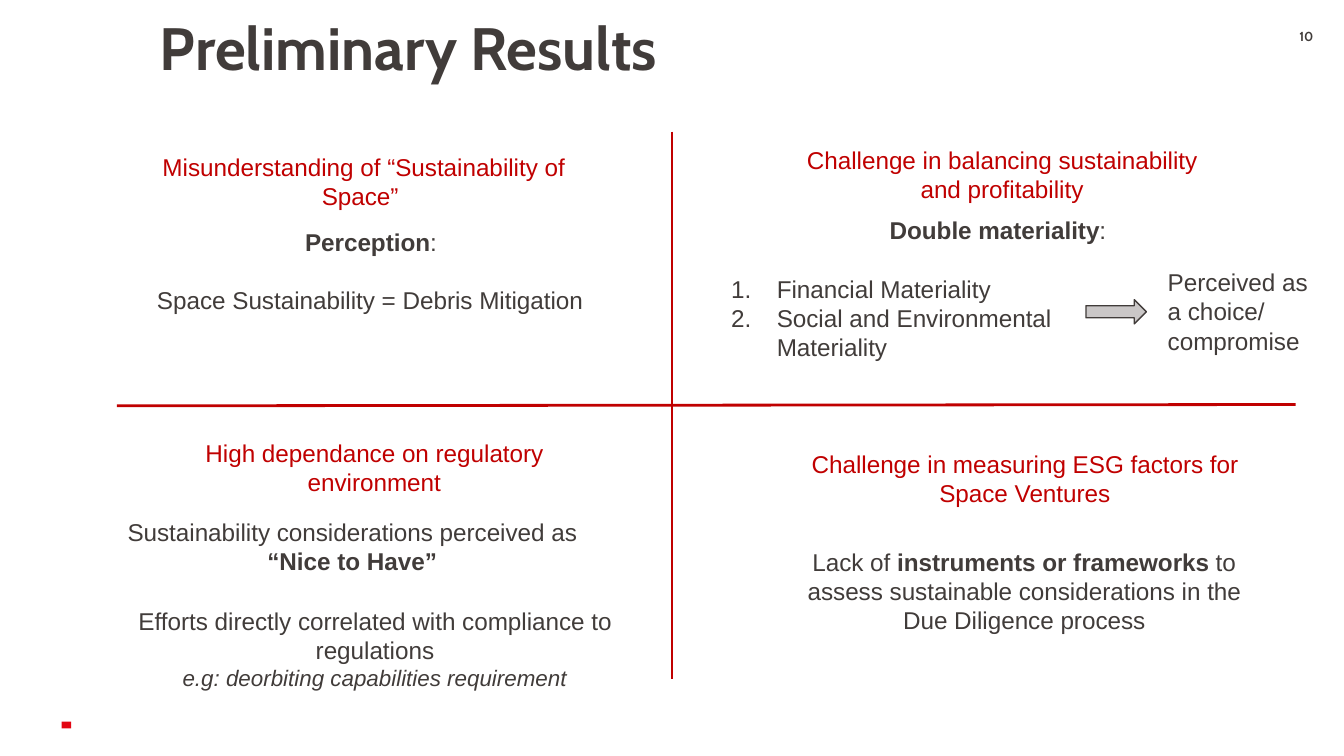
import pptx
import pptx.util
import pptx.dml.color
import pptx.enum.shapes
import pptx.enum.text
import lxml.etree
from dataclasses import dataclass
from pptx.util import Inches


@dataclass(frozen=True)
class Theme:
    text: str = "413C3A"
    accent: str = "C00000"
    marker: str = "E30613"
    arrow: str = "CAC7C7"
    heading_font: str = "Cabin"
    body_font: str = "Arial"
    title: int = 32
    body: int = 13
    example: int = 12
    number: int = 7


theme = Theme()
rgb = pptx.dml.color.RGBColor.from_string
LEFT = pptx.enum.text.PP_ALIGN.LEFT
CENTER = pptx.enum.text.PP_ALIGN.CENTER


def place(sp, left, top, width, height, insets=(0.1, 0.1, 0.1, 0.1)):
    sp.left, sp.top, sp.width, sp.height = map(Inches, (left, top, width, height))
    tf = sp.text_frame
    tf.word_wrap = True
    tf.auto_size = pptx.enum.text.MSO_AUTO_SIZE.NONE
    tf.vertical_anchor = pptx.enum.text.MSO_ANCHOR.TOP
    tf.margin_left, tf.margin_top, tf.margin_right, tf.margin_bottom = map(Inches, insets)
    return tf


def write(p, runs, align=CENTER, size=theme.body, color=theme.text,
          font=theme.body_font, italic=False):
    p.alignment = align
    p.space_before = pptx.util.Pt(0)
    for text, bold in runs:
        r = p.add_run()
        r.text = text
        r.font.name = font
        r.font.size = pptx.util.Pt(size)
        r.font.color.rgb = rgb(color)
        r.font.bold = bold
        r.font.italic = italic


prs = pptx.Presentation()
prs.slide_width = Inches(10)
prs.slide_height = prs.slide_width * 9 // 16
s = prs.slides.add_slide(prs.slide_layouts[1])
title, materialities = s.placeholders

tf = place(title, 0.99, 0.14, 5.86, 1.17, (0.2, 0, 0.08, 0.05))
p = tf.paragraphs[0]
p.line_spacing = 0.9
write(p, [("Preliminary Results", True)], LEFT, theme.title, font=theme.heading_font)

number = s.shapes.add_textbox(0, 0, 0, 0)
tf = place(number, 9.44, 0.21, 0.56, 0.18, (0.1, 0, 0.1, 0))
write(tf.paragraphs[0], [("10", True)], size=theme.number, font=theme.heading_font)

for x1, y1, x2, y2 in [(5, 0.98, 5, 5.05), (9.64, 3.01, 0.87, 3.02)]:
    divider = s.shapes.add_connector(
        pptx.enum.shapes.MSO_CONNECTOR.STRAIGHT, *map(Inches, (x1, y1, x2, y2)))
    divider.line.color.rgb = rgb(theme.accent)
    divider.line.width = pptx.util.Pt(1.5)
    lxml.etree.SubElement(divider.element.spPr, pptx.oxml.ns.qn("a:effectLst"))

headings = [
    (0.99, 1.03, "Misunderstanding of “Sustainability of Space” "),
    (5.74, 0.98, "Challenge in balancing sustainability and profitability"),
    (1.07, 3.16, "High dependance on regulatory environment"),
    (5.91, 3.24, "Challenge in measuring ESG factors for Space Ventures"),
]
for left, top, text in headings:
    tf = place(s.shapes.add_textbox(0, 0, 0, 0), left, top, 3.43, 0.64)
    write(tf.paragraphs[0], [(text, False)], color=theme.accent)

tf = place(s.shapes.add_textbox(0, 0, 0, 0), 1.07, 1.59, 3.43, 1.3)
write(tf.paragraphs[0], [("Perception", True), (": ", False)])
p = tf.add_paragraph()
write(p, [("Space Sustainability = Debris Mitigation", False)], LEFT)
p.space_before = pptx.util.Pt(15.5)

tf = place(materialities, 5.18, 1.94, 3.08, 0.86)
for i, text in enumerate(["Financial Materiality", "Social and Environmental Materiality"]):
    p = tf.add_paragraph() if i else tf.paragraphs[0]
    pPr = p._p.get_or_add_pPr()
    pPr.set("marL", str(Inches(0.5)))
    pPr.set("indent", str(Inches(-0.34)))
    bullet_color = lxml.etree.SubElement(pPr, pptx.oxml.ns.qn("a:buClr"))
    lxml.etree.SubElement(bullet_color, pptx.oxml.ns.qn("a:srgbClr"), val=theme.text)
    lxml.etree.SubElement(pPr, pptx.oxml.ns.qn("a:buFont"), typeface=theme.body_font)
    lxml.etree.SubElement(pPr, pptx.oxml.ns.qn("a:buAutoNum"), type="arabicPeriod")
    write(p, [(text, False)], LEFT)

blocks = [
    (8.59, 1.89, 1.29, 0.86, LEFT,
     [[("Perceived as a choice/", False)], [("compromise", False)]]),
    (5.81, 1.5, 3.28, 0.42, CENTER, [[("Double materiality", True), (": ", False)]]),
    (0.74, 3.75, 3.76, 1.08, CENTER,
     [[("Sustainability considerations perceived as", False)], [("“Nice to Have”", True)]]),
    (5.74, 3.97, 3.76, 1.3, CENTER,
     [[("Lack of ", False), ("instruments or frameworks", True),
       (" to assess sustainable considerations in the Due Diligence process", False)]]),
]
for left, top, width, height, align, paragraphs in blocks:
    tf = place(s.shapes.add_textbox(0, 0, 0, 0), left, top, width, height)
    for i, runs in enumerate(paragraphs):
        write(tf.add_paragraph() if i else tf.paragraphs[0], runs, align)

tf = place(s.shapes.add_textbox(0, 0, 0, 0), 0.91, 4.41, 3.76, 0.84)
write(tf.paragraphs[0],
      [("Efforts directly correlated with compliance to regulations", False)])
write(tf.add_paragraph(), [("e.g: deorbiting capabilities requirement", False)],
      size=theme.example, italic=True)

shapes = pptx.enum.shapes.MSO_SHAPE
arrow = s.shapes.add_shape(
    shapes.RIGHT_ARROW, Inches(8.08), Inches(2.23), Inches(0.45), Inches(0.18))
arrow.shadow.inherit = False
arrow.fill.solid()
arrow.fill.fore_color.rgb = rgb(theme.arrow)
arrow.line.color.rgb = rgb(theme.text)
arrow.line.width = pptx.util.Pt(0.75)

marker = s.shapes.add_shape(
    shapes.RECTANGLE, Inches(0.46), Inches(5.37), Inches(0.07), Inches(0.05))
marker.shadow.inherit = False
marker.fill.solid()
marker.fill.fore_color.rgb = rgb(theme.marker)
marker.line.fill.background()

prs.save("out.pptx")
